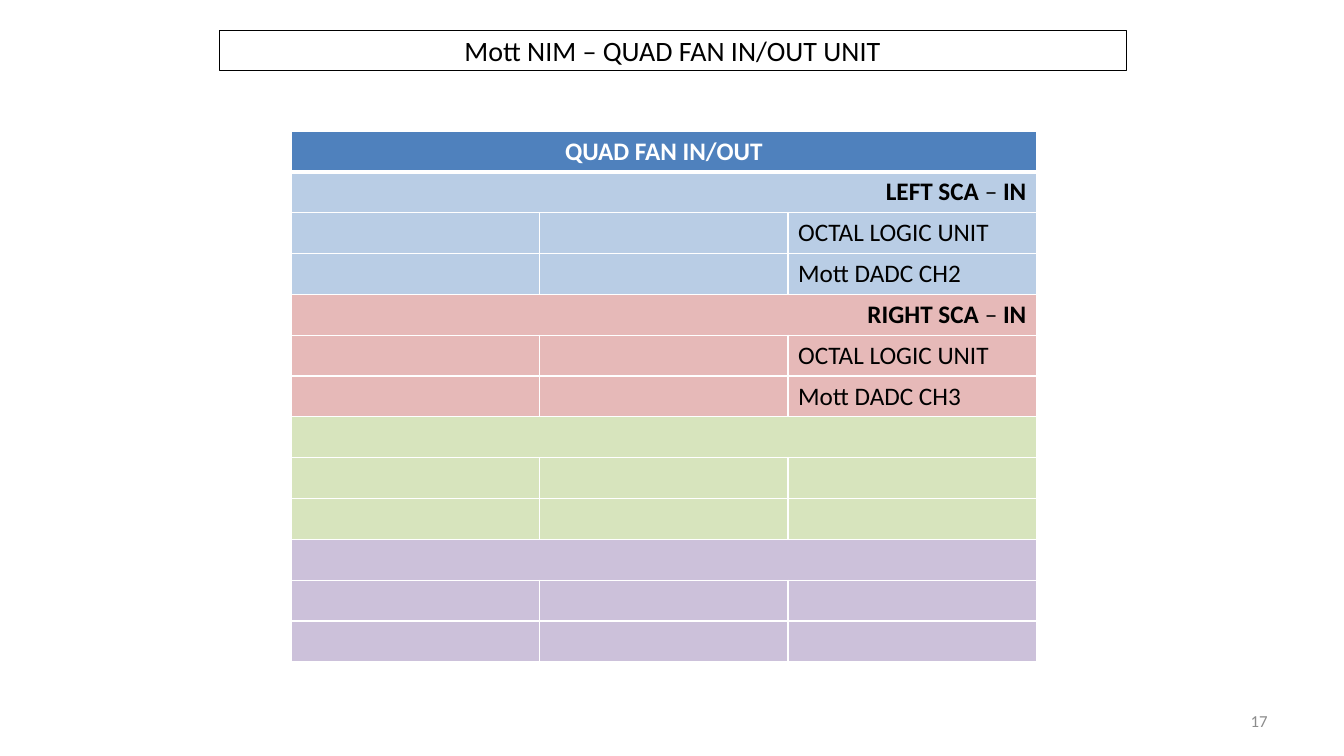
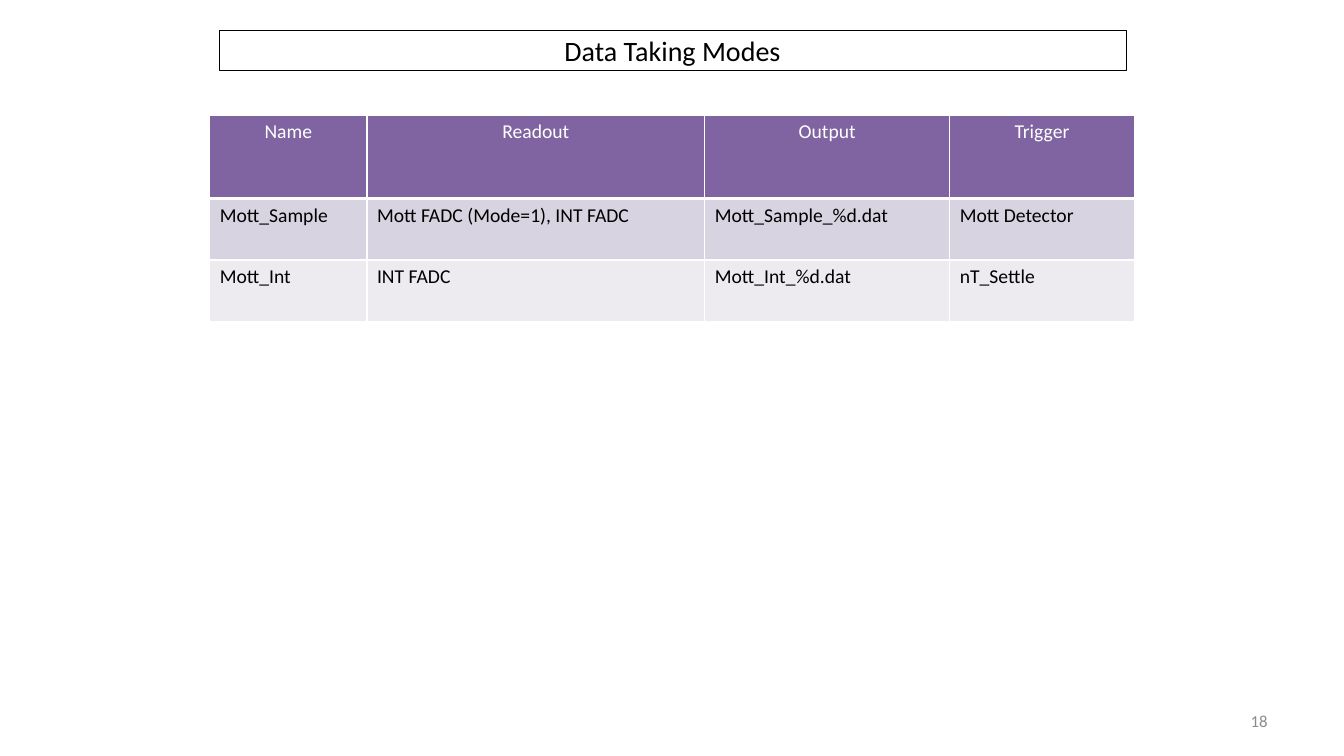
"""Build two slides on the Mott electronics: the fan in/out wiring and the data taking modes."""
from lxml import etree
from pptx import Presentation
from pptx.dml.color import RGBColor
from pptx.enum.text import MSO_ANCHOR, MSO_AUTO_SIZE, PP_ALIGN
from pptx.oxml.ns import qn
from pptx.util import Inches, Pt

LEFT, CENTER, RIGHT = PP_ALIGN.LEFT, PP_ALIGN.CENTER, PP_ALIGN.RIGHT
MIDDLE = MSO_ANCHOR.MIDDLE
NO_AUTOFIT = MSO_AUTO_SIZE.NONE

FONT = "Calibri"
BLACK = RGBColor(0x00, 0x00, 0x00)
WHITE = RGBColor(0xFF, 0xFF, 0xFF)
GRAY = RGBColor(0x8C, 0x8C, 0x8C)
BLUE = RGBColor(0x4F, 0x81, 0xBD)
LIGHT_BLUE = RGBColor(0xB9, 0xCD, 0xE5)
LIGHT_RED = RGBColor(0xE6, 0xB9, 0xB8)
LIGHT_GREEN = RGBColor(0xD7, 0xE4, 0xBD)
LIGHT_PURPLE = RGBColor(0xCC, 0xC1, 0xDA)
PURPLE = RGBColor(0x80, 0x64, 0xA2)
MODE_BANDS = (RGBColor(0xD8, 0xD3, 0xE0), RGBColor(0xED, 0xEA, 0xF0))

TITLE_ONLY = 5
FIRST_NUMBER = 17

FAN_TITLE = "Mott NIM – QUAD FAN IN/OUT UNIT"
FAN_HEADER = "QUAD FAN IN/OUT"
FAN_COLUMNS = 3
FAN_GROUPS = [
    ("LEFT SCA ", ["OCTAL LOGIC UNIT", "Mott DADC CH2"], LIGHT_BLUE),
    ("RIGHT SCA ", ["OCTAL LOGIC UNIT", "Mott DADC CH3"], LIGHT_RED),
    ("", ["", ""], LIGHT_GREEN),
    ("", ["", ""], LIGHT_PURPLE),
]

MODES_TITLE = "Data Taking Modes"
MODES = [
    ("Name", "Readout", "Output", "Trigger"),
    ("Mott_Sample", "Mott FADC (Mode=1), INT FADC", "Mott_Sample_%d.dat", "Mott Detector"),
    ("Mott_Int", "INT FADC", "Mott_Int_%d.dat", "nT_Settle"),
]
MODE_WIDTHS = (1.56, 3.35, 2.43, 1.83)
MODE_HEIGHTS = (0.83, 0.61, 0.61)


def write(frame, text, size=18, color=BLACK, bold=False, align=LEFT):
    """Write a string, or a list of (string, bold) runs, as one paragraph."""
    paragraph = frame.paragraphs[0]
    paragraph.alignment = align
    paragraph.font.size = Pt(size)
    runs = [(text, bold)] if isinstance(text, str) else text
    for words, is_bold in runs:
        if not words:
            continue
        run = paragraph.add_run()
        run.text = words
        run.font.name = FONT
        run.font.size = Pt(size)
        run.font.bold = is_bold
        run.font.color.rgb = color


def style_cell(cell, fill, bottom=1):
    """Give a cell white borders and a solid fill."""
    properties = cell._tc.get_or_add_tcPr()
    for side, width in (("lnL", 1), ("lnR", 1), ("lnT", 1), ("lnB", bottom)):
        line = etree.SubElement(properties, qn(f"a:{side}"), w=str(Pt(width)))
        solid = etree.SubElement(line, qn("a:solidFill"))
        etree.SubElement(solid, qn("a:srgbClr"), val=str(WHITE))
    cell.fill.solid()
    cell.fill.fore_color.rgb = fill


def add_grid(slide, fills, columns, left, top, width, height):
    """Add a table with one fill per row and a thick line under the header."""
    frame = slide.shapes.add_table(
        len(fills), columns, Inches(left), Inches(top), Inches(width), Inches(height))
    table = frame.table
    table.horz_banding = False
    for row_index, fill in enumerate(fills):
        for cell in table.rows[row_index].cells:
            style_cell(cell, fill, bottom=1 if row_index else 3)
            cell.text_frame.paragraphs[0].font.size = Pt(18)
    return table


def add_slide(presentation, title_text):
    """Add a slide with the framed title and the page number."""
    slide = presentation.slides.add_slide(presentation.slide_layouts[TITLE_ONLY])
    title = slide.shapes.title
    title.left, title.top = Inches(2.17), Inches(0.3)
    title.width, title.height = Inches(9), Inches(0.4)
    title.line.color.rgb = BLACK
    title.line.width = Pt(0.25)
    title.text_frame.auto_size = NO_AUTOFIT
    title.text_frame.vertical_anchor = MIDDLE
    write(title.text_frame, title_text, size=20, align=CENTER)

    number = slide.shapes.add_textbox(Inches(9.56), Inches(6.95), Inches(3.11), Inches(0.4))
    number.text_frame.word_wrap = True
    number.text_frame.vertical_anchor = MIDDLE
    page = FIRST_NUMBER + len(presentation.slides) - 1
    write(number.text_frame, str(page), size=12, color=GRAY, align=RIGHT)
    return slide


def add_fan_slide(presentation):
    """Show the four fan groups, each with a merged heading row."""
    slide = add_slide(presentation, FAN_TITLE)
    fills = [BLUE]
    for heading, outputs, fill in FAN_GROUPS:
        fills += [fill] * (1 + len(outputs))
    table = add_grid(slide, fills, FAN_COLUMNS, 2.89, 1.3, 7.39, 5.27)
    last = FAN_COLUMNS - 1

    def write_across(row, text, **text_format):
        table.cell(row, 0).merge(table.cell(row, last))
        write(table.cell(row, 0).text_frame, text, **text_format)

    write_across(0, FAN_HEADER, color=WHITE, bold=True, align=CENTER)
    row = 1
    for heading, outputs, fill in FAN_GROUPS:
        runs = [(heading, True), ("– ", False), ("IN", True)] if heading else ""
        write_across(row, runs, align=RIGHT)
        for offset, output in enumerate(outputs, 1):
            write(table.cell(row + offset, last).text_frame, output)
        row += 1 + len(outputs)


def add_modes_slide(presentation):
    """List the data taking modes."""
    slide = add_slide(presentation, MODES_TITLE)
    table = add_grid(slide, (PURPLE, *MODE_BANDS), len(MODE_WIDTHS),
                     2.08, 1.14, sum(MODE_WIDTHS), sum(MODE_HEIGHTS))
    for column, width in zip(table.columns, MODE_WIDTHS):
        column.width = Inches(width)
    for row_index, (row, height, texts) in enumerate(zip(table.rows, MODE_HEIGHTS, MODES)):
        row.height = Inches(height)
        text_format = {} if row_index else {"color": WHITE, "align": CENTER}
        for cell, text in zip(row.cells, texts):
            write(cell.text_frame, text, size=14, **text_format)


def main():
    """Build and save the presentation."""
    presentation = Presentation()
    presentation.slide_width, presentation.slide_height = Inches(13.33), Inches(7.5)
    add_fan_slide(presentation)
    add_modes_slide(presentation)
    presentation.save("out.pptx")


if __name__ == "__main__":
    main()
